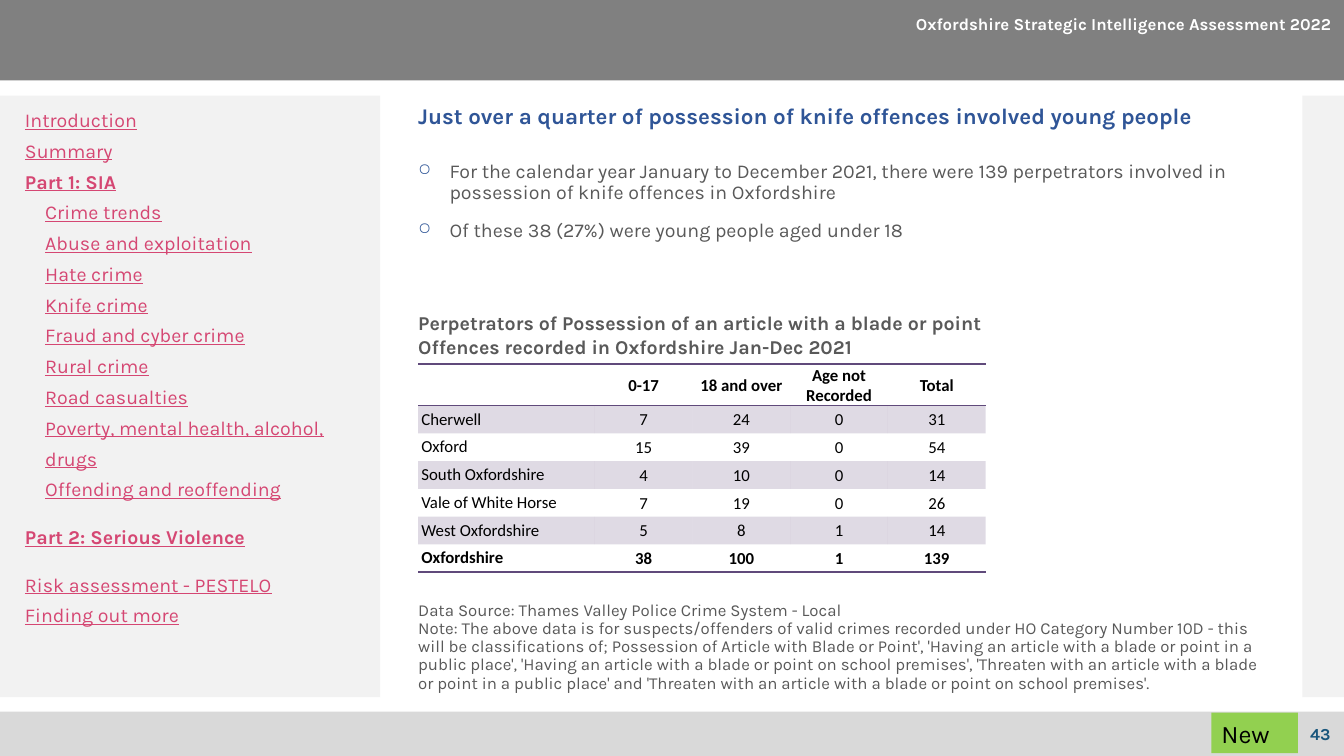
from lxml import etree
from pptx import Presentation
from pptx import util as u
from pptx.dml.color import RGBColor
from pptx.enum import shapes, text
from pptx.oxml.ns import qn

PALE = RGBColor(0xF2, 0xF2, 0xF2)
SILVER = RGBColor(0xD9, 0xD9, 0xD9)
GREY = RGBColor(0x80, 0x80, 0x80)
BODY = RGBColor(0x59, 0x59, 0x59)
BLUE = RGBColor(0x2F, 0x55, 0x97)
NAVY = RGBColor(0x19, 0x56, 0x7C)
PINK = RGBColor(0xD5, 0x47, 0x73)
GREEN = RGBColor(0x92, 0xD0, 0x50)
PURPLE = RGBColor(0x60, 0x4A, 0x7B)
WHITE = RGBColor(0xFF, 0xFF, 0xFF)
BLACK = RGBColor(0, 0, 0)

PLAIN_TABLE = "{2D5ABB26-0587-4C30-8999-92F81FD0307C}"
PAGE_WIDTH, PAGE_HEIGHT = 33.87, 19.05

# Menu entries: wording, indented, bold, space before in points
MENU = [
    ("Introduction", False, False, 0),
    ("Summary", False, False, 0),
    ("Part 1: SIA", False, True, 0),
    ("Crime trends", True, False, 0),
    ("Abuse and exploitation", True, False, 0),
    ("Hate crime", True, False, 0),
    ("Knife crime", True, False, 0),
    ("Fraud and cyber crime", True, False, 0),
    ("Rural crime", True, False, 0),
    ("Road casualties", True, False, 0),
    ("Poverty, mental health, alcohol, drugs", True, False, 0),
    ("Offending and reoffending", True, False, 0),
    ("Part 2: Serious Violence", False, True, 12),
    ("Risk assessment - PESTELO", False, False, 12),
    ("Finding out more", False, False, 0),
]
FINDINGS = [
    "For the calendar year January to December 2021, there were 139 perpetrators "
    "involved in possession of knife offences in Oxfordshire",
    "Of these 38 (27%) were young people aged under 18",
]
CAPTION = [
    "Perpetrators of Possession of an article with a blade or point",
    "Offences recorded in Oxfordshire Jan-Dec 2021",
]
OFFENDERS = [
    ("", "0-17", "18 and over", "Age not Recorded", "Total"),
    ("Cherwell", 7, 24, 0, 31),
    ("Oxford", 15, 39, 0, 54),
    ("South Oxfordshire", 4, 10, 0, 14),
    ("Vale of White Horse", 7, 19, 0, 26),
    ("West Oxfordshire", 5, 8, 1, 14),
    ("Oxfordshire", 38, 100, 1, 139),
]
NOTES = [
    "Data Source: Thames Valley Police Crime System - Local",
    "Note: The above data is for suspects/offenders of valid crimes recorded under "
    "HO Category Number 10D - this will be classifications of; Possession of Article "
    "with Blade or Point', 'Having an article with a blade or point in a public place', "
    "'Having an article with a blade or point on school premises', 'Threaten with an "
    "article with a blade or point in a public place' and 'Threaten with an article "
    "with a blade or point on school premises'.",
]


def add_band(page, left, top, width, height, color):
    band = page.shapes.add_shape(
        shapes.MSO_SHAPE.RECTANGLE, u.Cm(left), u.Cm(top), u.Cm(width), u.Cm(height))
    band.shadow.inherit = False
    band.fill.solid()
    band.fill.fore_color.rgb = color
    band.line.fill.background()
    return band


def style_font(font, size, color, bold=False, name="Karla"):
    font.name, font.size, font.bold = name, u.Pt(size), bold
    font.color.rgb = color


def write(frame, lines, size, color, bold=False, align=text.PP_ALIGN.LEFT, spacing=None):
    """Fill a text frame with one paragraph per line and return the paragraphs."""
    for number, line in enumerate(lines):
        para = frame.add_paragraph() if number else frame.paragraphs[0]
        para.text = line
        para.alignment = align
        if spacing:
            para.line_spacing = spacing
        style_font(para.font, size, color, bold)
    return frame.paragraphs


def add_text(page, left, top, width, height, lines, size, color,
             anchor=text.MSO_ANCHOR.TOP, **style):
    box = page.shapes.add_textbox(u.Cm(left), u.Cm(top), u.Cm(width), u.Cm(height))
    box.text_frame.word_wrap = True
    box.text_frame.vertical_anchor = anchor
    return write(box.text_frame, lines, size, color, **style)


def indent(para, margin, first=0.0):
    properties = para._p.get_or_add_pPr()
    properties.set("marL", str(u.Cm(margin)))
    properties.set("indent", str(u.Cm(first)))
    return properties


def add_ring_bullet(para):
    properties = indent(para, 0.79, -0.79)
    color = etree.SubElement(properties, qn("a:buClr"))
    etree.SubElement(color, qn("a:srgbClr"), val=str(BLUE))
    etree.SubElement(properties, qn("a:buSzPct"), val="85000")
    etree.SubElement(properties, qn("a:buChar"), char="○")


def build_frame(page, title, number):
    """Header, side and footer bands with the running title and page number."""
    side_top, side_height = 2.41, 15.16
    add_band(page, 0, 17.93, PAGE_WIDTH, PAGE_HEIGHT - 17.93, SILVER)
    add_band(page, 0, 0, PAGE_WIDTH, 2.03, GREY)
    add_band(page, 0, side_top, 9.58, side_height, PALE)
    add_band(page, 32.82, side_top, PAGE_WIDTH - 32.82, side_height, PALE)
    label = dict(size=12, bold=True, align=text.PP_ALIGN.RIGHT,
                 anchor=text.MSO_ANCHOR.MIDDLE)
    add_text(page, 20.78, 0.08, 13.03, 1.02, [title], color=WHITE, **label)
    add_text(page, 29.54, 17.98, 4.24, 1.02, [number], color=NAVY, **label)
    tag = add_band(page, 30.53, 17.96, 2.18, 1.02, GREEN)
    write(tag.text_frame, ["New"], 18, BLACK)


def build_menu(page, left, top, width, height):
    paras = add_text(page, left, top, width, height, [entry[0] for entry in MENU],
                     14, PINK, spacing=u.Pt(22))
    for para, (_, nested, bold, before) in zip(paras, MENU):
        para.font.underline = True
        para.font.bold = bold
        para.space_before = u.Pt(before)
        if nested:
            para.level = 1
            indent(para, 0.51)


def add_border(cell, side):
    line = etree.SubElement(cell._tc.get_or_add_tcPr(), qn(f"a:ln{side}"), w=str(u.Pt(1)))
    fill = etree.SubElement(line, qn("a:solidFill"))
    etree.SubElement(fill, qn("a:srgbClr"), val=str(PURPLE))


def shade(cell):
    """Tint a cell with purple at 20 % opacity."""
    cell.fill.solid()
    cell.fill.fore_color.rgb = PURPLE
    color = cell._tc.tcPr.find(".//" + qn("a:srgbClr"))
    etree.SubElement(color, qn("a:alpha"), val="20000")


def build_table(page, left, top, width):
    label_width, header_height, row_height = 4.45, 1.05, 0.7
    last = len(OFFENDERS) - 1
    columns = len(OFFENDERS[0])
    frame = page.shapes.add_table(
        last + 1, columns, u.Cm(left), u.Cm(top), u.Cm(width),
        u.Cm(header_height + last * row_height))
    table = frame.table
    table._tbl.tblPr.find(qn("a:tableStyleId")).text = PLAIN_TABLE
    table.first_row = table.horz_banding = False
    for index, column in enumerate(table.columns):
        column.width = u.Cm((width - label_width) / (columns - 1) if index else label_width)
    for row, values in enumerate(OFFENDERS):
        table.rows[row].height = u.Cm(row_height if row else header_height)
        for column, value in enumerate(values):
            cell = table.cell(row, column)
            cell.text = str(value)
            cell.vertical_anchor = text.MSO_ANCHOR.MIDDLE
            cell.margin_left = cell.margin_right = u.Cm(0.03 if column else 0.08)
            cell.margin_top, cell.margin_bottom = u.Cm(0.03 if column else 0), 0
            para = cell.text_frame.paragraphs[0]
            para.alignment = text.PP_ALIGN.CENTER if column else text.PP_ALIGN.LEFT
            style_font(para.font, 12, BLACK, row in (0, last), "Calibri")
            if row == 0:
                add_border(cell, "T")
            if row in (0, last):
                add_border(cell, "B")
            if row % 2:
                shade(cell)
            else:
                cell.fill.background()


def build_content(page, left, top, width):
    add_text(page, left, top, width, 1.12,
             ["Just over a quarter of possession of knife offences involved young people"],
             16, BLUE, bold=True, spacing=u.Pt(20))
    for para in add_text(page, left, top + 1.53, width, 3.12, FINDINGS, 14, BODY, spacing=0.9):
        para.space_before = u.Pt(12)
        add_ring_bullet(para)
    add_text(page, left, top + 5.31, width, 1.45, CAPTION, 14, BODY, bold=True)
    build_table(page, left + 0.25, top + 6.76, 14.3)
    add_text(page, left, top + 12.4, width, 2.77, NOTES, 12, BODY,
             anchor=text.MSO_ANCHOR.BOTTOM, spacing=0.9)


def main():
    deck = Presentation()
    deck.slide_width, deck.slide_height = u.Cm(PAGE_WIDTH), u.Cm(PAGE_HEIGHT)
    page = deck.slides.add_slide(deck.slide_layouts[6])
    build_frame(page, "Oxfordshire Strategic Intelligence Assessment 2022", "43")
    build_menu(page, 0.38, 2.41, 8.94, 15.09)
    build_content(page, 10.29, 2.41, 21.87)
    deck.save("out.pptx")


if __name__ == "__main__":
    main()
